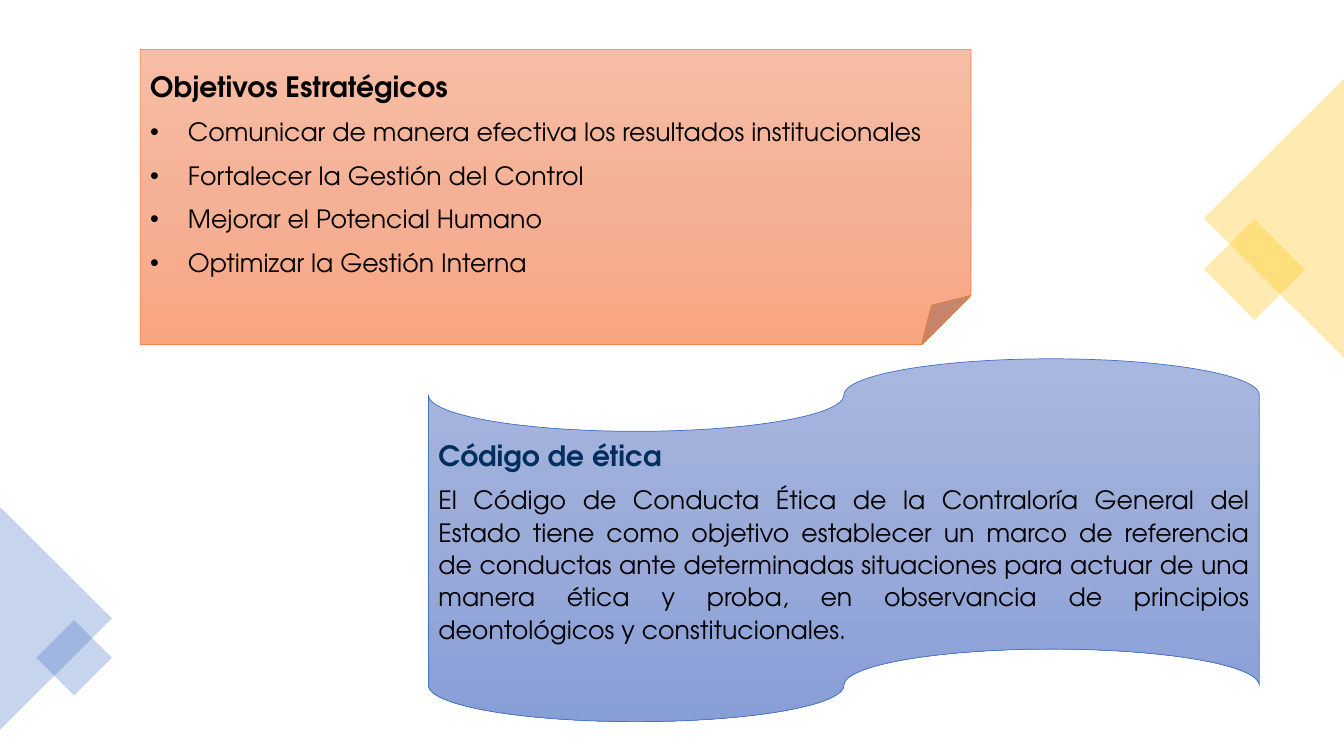
import math
from copy import deepcopy

from lxml import etree
from pptx import Presentation, util as u
from pptx.dml.color import RGBColor
from pptx.enum import shapes, text
from pptx.oxml import ns

PX = 9144
FONT = "TeX Gyre Adventor"
AMBER = RGBColor(0xFF, 0xC0, 0x00)
BLUE = RGBColor(0x44, 0x72, 0xC4)
ORANGE = RGBColor(0xED, 0x7D, 0x31)
NAVY = RGBColor(0x00, 0x2F, 0x5F)
BLACK = RGBColor(0x00, 0x00, 0x00)
PEACH_STOPS = (RGBColor(0xF7, 0xBD, 0xA5), RGBColor(0xF5, 0xB1, 0x96), RGBColor(0xF8, 0xA5, 0x82))
BLUE_STOPS = (RGBColor(0xA8, 0xB7, 0xDF), RGBColor(0x9A, 0xAB, 0xD9), RGBColor(0x88, 0x9E, 0xD7))

OBJECTIVES = [
    "Comunicar de manera efectiva los resultados institucionales",
    "Fortalecer la Gestión del Control",
    "Mejorar el Potencial Humano",
    "Optimizar la Gestión Interna",
]
ETHICS = (
    "El Código de Conducta Ética de la Contraloría General del Estado tiene como "
    "objetivo establecer un marco de referencia de conductas ante determinadas "
    "situaciones para actuar de una manera ética y proba, en observancia de "
    "principios deontológicos y constitucionales."
)


def add_preset(slide, preset, box):
    shape = slide.shapes.add_shape(preset, *(round(side * PX) for side in box))
    shape.shadow.inherit = False
    return shape


def add_tint(slide, preset, center, size, rotation, color):
    (x, y), (width, height) = center, size
    tint = add_preset(slide, preset, (x - width / 2, y - height / 2, width, height))
    tint.rotation = rotation
    tint.line.fill.background()
    tint.fill.solid()
    tint.fill.fore_color.rgb = color
    solid = tint.element.spPr.find(ns.qn("a:solidFill"))
    etree.SubElement(solid[0], ns.qn("a:alpha"), val="30000")


def add_corner(slide, box, diamond_side, diamond_drop, points_left, color):
    left, top, width, height = box
    middle = top + height / 2
    reach = diamond_side / math.sqrt(2)
    diamond_x = left + reach if points_left else left + width - reach
    add_tint(slide, shapes.MSO_SHAPE.ISOSCELES_TRIANGLE, (left + width / 2, middle),
             (height, width), 270 if points_left else 90, color)
    add_tint(slide, shapes.MSO_SHAPE.RECTANGLE, (diamond_x, middle + diamond_drop),
             (diamond_side, diamond_side), 45, color)


def fill_downward(shape, colors):
    shape.fill.gradient()
    shape.fill.gradient_angle = 270
    stop_list = shape.element.spPr.find(ns.qn("a:gradFill")).find(ns.qn("a:gsLst"))
    stop_list.insert(1, deepcopy(stop_list[0]))
    for index, (stop, color) in enumerate(zip(shape.fill.gradient_stops, colors)):
        stop.position = index / (len(colors) - 1)
        stop.color.rgb = color


def add_bullet(paragraph):
    props = paragraph._p.get_or_add_pPr()
    props.set("marL", "342900")
    props.set("indent", "-342900")
    etree.SubElement(props, ns.qn("a:buFont"), typeface="Arial")
    etree.SubElement(props, ns.qn("a:buChar"), char="•")
    tabs = etree.SubElement(props, ns.qn("a:tabLst"))
    etree.SubElement(tabs, ns.qn("a:tab"), pos="457200", algn="l")


def add_panel(slide, preset, box, stops, outline, heading, heading_color, body, align, gap):
    panel = add_preset(slide, preset, box)
    fill_downward(panel, stops)
    panel.line.color.rgb = outline
    panel.line.width = u.Pt(0.5)
    frame = panel.text_frame
    frame.word_wrap = True
    frame.vertical_anchor = text.MSO_ANCHOR.MIDDLE
    frame.text = "\n".join([heading, *body])
    for index, paragraph in enumerate(frame.paragraphs):
        is_heading = index == 0
        paragraph.alignment = text.PP_ALIGN.LEFT if is_heading else align
        paragraph.line_spacing = 1.07
        paragraph.space_after = u.Pt(gap)
        font = paragraph.runs[0].font
        font.name = FONT
        font.size = u.Pt(20 if is_heading else 18)
        font.bold = is_heading
        font.color.rgb = heading_color if is_heading else BLACK
    return frame


def add_ethics(slide, box):
    add_panel(slide, shapes.MSO_SHAPE.FLOWCHART_PUNCHED_TAPE, box, BLUE_STOPS, BLUE,
              "Código de ética", NAVY, [ETHICS], text.PP_ALIGN.JUSTIFY, 7.5)


def add_objectives(slide, box):
    frame = add_panel(slide, shapes.MSO_SHAPE.FOLDED_CORNER, box, PEACH_STOPS, ORANGE,
                      "Objetivos Estratégicos", BLACK, OBJECTIVES, text.PP_ALIGN.LEFT, 8)
    for paragraph in frame.paragraphs[1:]:
        add_bullet(paragraph)


def main():
    deck = Presentation()
    deck.slide_width, deck.slide_height = 1333 * PX, 750 * PX
    slide = deck.slides.add_slide(deck.slide_layouts[6])
    add_corner(slide, (1194, 78, 139, 277), 71, 51, True, AMBER)
    add_corner(slide, (0, 503, 111, 221), 53, 39, False, BLUE)
    add_ethics(slide, (425, 356, 824, 360))
    add_objectives(slide, (139, 49, 824, 293))
    deck.save("out.pptx")


if __name__ == "__main__":
    main()
